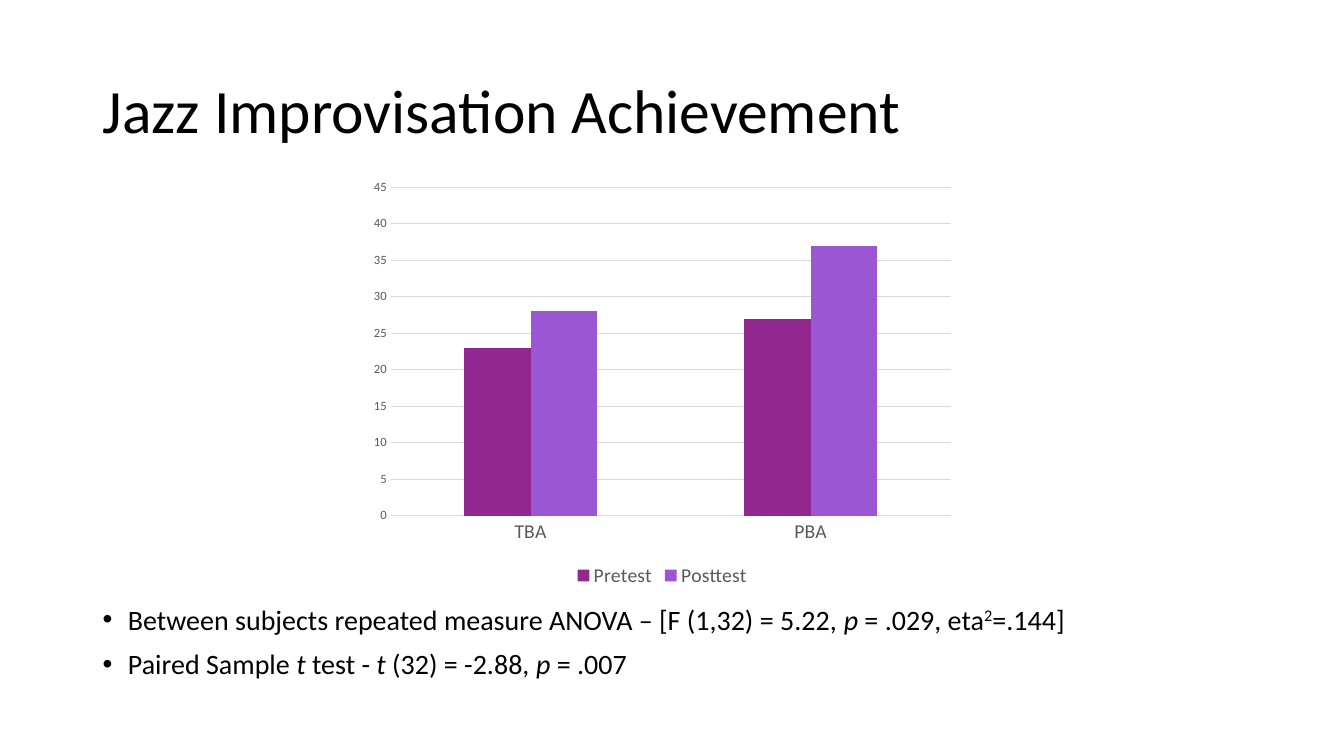
import pptx
import pptx.chart.data
import pptx.dml.color
import pptx.enum.chart
import pptx.enum.text
import pptx.util

Cm = pptx.util.Cm
Pt = pptx.util.Pt

FONT = "Calibri"
COLOURS = {
    "text": "000000",
    "label": "595959",
    "grid": "D9D9D9",
    "Pretest": "92278F",
    "Posttest": "9B57D3",
}
SCORES = {"Pretest": (23, 27), "Posttest": (28, 37)}
FINDINGS = [
    [
        ("Between subjects repeated measure ANOVA – [F (1,32) = 5.22, ", {}),
        ("p", {"italic": True}),
        (" = .029, eta", {}),
        ("2", {"raised": True}),
        ("=.144]", {}),
    ],
    [
        ("Paired Sample ", {}),
        ("t", {"italic": True}),
        (" test - ", {}),
        ("t ", {"italic": True}),
        ("(32) = -2.88, ", {}),
        ("p ", {"italic": True}),
        ("= .007", {}),
    ],
]


def colour(name):
    return pptx.dml.color.RGBColor.from_string(COLOURS[name])


def style_font(font, size, name):
    font.name = FONT
    font.size = Pt(size)
    font.color.rgb = colour(name)


def add_text(paragraph, text, size=20, italic=False, raised=False):
    run = paragraph.add_run()
    run.text = text
    style_font(run.font, size, "text")
    run.font.italic = italic
    if raised:
        run._r.get_or_add_rPr().set("baseline", "30000")


def place(placeholder, left, top, width, height, anchor):
    placeholder.left, placeholder.top = Cm(left), Cm(top)
    placeholder.width, placeholder.height = Cm(width), Cm(height)
    frame = placeholder.text_frame
    frame.word_wrap = True
    frame.auto_size = pptx.enum.text.MSO_AUTO_SIZE.NONE
    frame.vertical_anchor = anchor
    return frame


def fill_title(slide):
    frame = place(slide.shapes.title, 2.33, 1.02, 29.21, 3.68,
                  pptx.enum.text.MSO_ANCHOR.MIDDLE)
    heading = frame.paragraphs[0]
    heading.alignment = pptx.enum.text.PP_ALIGN.LEFT
    heading.line_spacing = 0.9
    add_text(heading, "Jazz Improvisation Achievement", size=44)


def fill_findings(slide):
    frame = place(slide.placeholders[1], 2.33, 15.14, 29.21, 2.03,
                  pptx.enum.text.MSO_ANCHOR.TOP)
    for index, finding in enumerate(FINDINGS):
        bullet = frame.add_paragraph() if index else frame.paragraphs[0]
        bullet.line_spacing = 0.9
        bullet.space_before = Pt(10 if index else 0)
        indent = bullet._p.get_or_add_pPr()
        indent.set("marL", str(Cm(0.64)))
        indent.set("indent", str(-Cm(0.64)))
        for text, formatting in finding:
            add_text(bullet, text, **formatting)


def style_axis(axis, size):
    axis.major_tick_mark = pptx.enum.chart.XL_TICK_MARK.NONE
    axis.minor_tick_mark = pptx.enum.chart.XL_TICK_MARK.NONE
    style_font(axis.tick_labels.font, size, "label")


def style_line(line):
    line.color.rgb = colour("grid")
    line.width = Pt(0.75)


def add_scores(slide):
    scores = pptx.chart.data.CategoryChartData()
    scores.categories = ["TBA", "PBA"]
    for test, means in SCORES.items():
        scores.add_series(test, means)
    chart = slide.shapes.add_chart(
        pptx.enum.chart.XL_CHART_TYPE.COLUMN_CLUSTERED,
        Cm(9.12), Cm(4.32), Cm(15.14), Cm(10.59), scores).chart
    style_font(chart.font, 10, "text")
    chart.has_title = False
    chart.has_legend = True
    chart.legend.position = pptx.enum.chart.XL_LEGEND_POSITION.BOTTOM
    chart.legend.include_in_layout = False
    style_font(chart.legend.font, 14, "label")

    groups = chart.category_axis
    style_axis(groups, 14)
    style_line(groups.format.line)
    scale = chart.value_axis
    style_axis(scale, 9)
    scale.format.line.fill.background()
    scale.minimum_scale, scale.maximum_scale, scale.major_unit = 0, 45, 5
    scale.has_major_gridlines = True
    style_line(scale.major_gridlines.format.line)

    columns = chart.plots[0]
    columns.gap_width = 219
    columns.overlap = 0
    columns.vary_by_categories = False
    for test in columns.series:
        test.format.fill.solid()
        test.format.fill.fore_color.rgb = colour(test.name)


def main():
    deck = pptx.Presentation()
    deck.slide_width, deck.slide_height = Cm(33.87), Cm(19.05)
    slide = deck.slides.add_slide(deck.slide_layouts[1])
    fill_title(slide)
    fill_findings(slide)
    add_scores(slide)
    deck.save("out.pptx")


if __name__ == "__main__":
    main()
